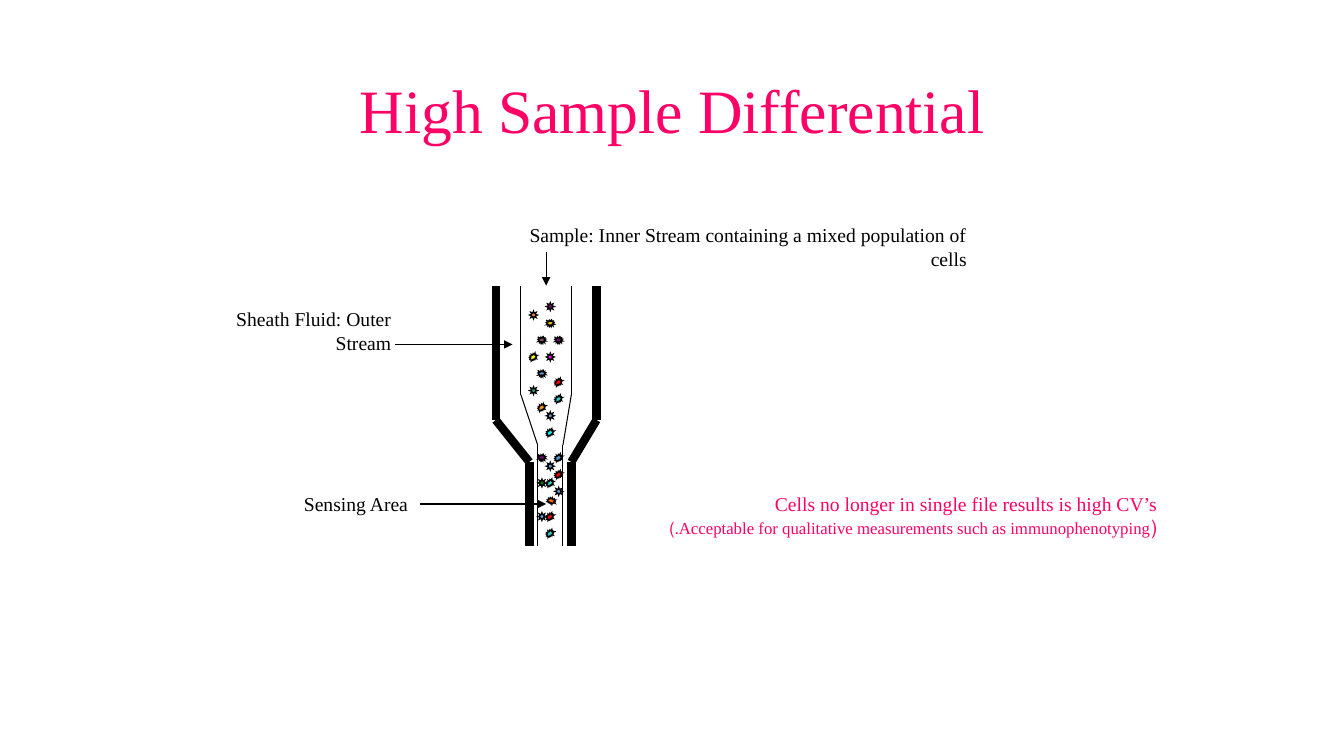
from dataclasses import dataclass
from itertools import pairwise

from lxml.etree import SubElement
from pptx import Presentation
from pptx.dml.color import RGBColor
from pptx.enum.shapes import MSO_CONNECTOR, MSO_SHAPE
from pptx.enum.text import MSO_ANCHOR, MSO_AUTO_SIZE, PP_ALIGN
from pptx.oxml.ns import qn
from pptx.util import Inches, Pt


@dataclass(frozen=True)
class Theme:
    font: str = "Times New Roman"
    accent: str = "FF0066"
    ink: str = "000000"
    title: float = 44
    body: float = 14
    note: float = 12
    thin: float = 0.75
    wall: float = 6


THEME = Theme()
UNIT = 1 / 12

WALLS = [
    (THEME.wall, [(0, 0), (0, 16), (4, 21), (4, 31)]),
    (THEME.wall, [(12, 0), (12, 16), (9, 21), (9, 31)]),
    (THEME.thin, [(3, 0), (3, 13), (5, 19), (5, 31)]),
    (THEME.thin, [(9, 0), (9, 13), (8, 19), (8, 31)]),
]

SEAL, BURST, SUN = MSO_SHAPE.EXPLOSION1, MSO_SHAPE.EXPLOSION2, MSO_SHAPE.SUN
CELLS = [
    (7, 20, BURST, "5B9BD5"),
    (5, 20, SEAL, "800080"),
    (5, 23, SUN, "008000"),
    (5, 6, SEAL, "954F72"),
    (5, 14, BURST, "FF9900"),
    (4, 3, SUN, "ED7D31"),
    (7, 6, SEAL, "800080"),
    (6, 4, SEAL, "FFCC00"),
    (5, 10, SEAL, "5B9BD5"),
    (6, 17, BURST, "00FFFF"),
    (7, 13, BURST, "33CCCC"),
    (4, 8, BURST, "FFFF00"),
    (7, 11, BURST, "FF0000"),
    (6, 2, SUN, "800080"),
    (4, 12, SUN, "339966"),
    (6, 8, SUN, "FF00FF"),
    (6, 15, SUN, "5B9BD5"),
    (7, 24, SUN, "5B9BD5"),
    (6, 21, SUN, "5B9BD5"),
    (7, 22, BURST, "FF0000"),
    (6, 23, BURST, "33CCCC"),
    (5, 27, SUN, "5B9BD5"),
    (6, 27, BURST, "FF0000"),
    (6, 29, BURST, "33CCCC"),
]
TILTED_CELL = (6.15, 25.15, BURST, "FF6600", 54.1)

LABELS = [
    ("Sheath Fluid: Outer Stream", (-33.25, 2, 22, 6.8), (-12, 7), (2, 7)),
    ("Sample: Inner Stream containing a mixed population of cells",
     (1.25, -8, 56, 6.8), (6, -4), (6, 0)),
    ("Sensing Area", (-25.25, 24, 16, 4), (-9, 26), (6, 26)),
]


def apply(obj, formats):
    for name, value in formats.items():
        setattr(obj, name, value)


def add_text(s, box, paragraphs, color, frame=None, paragraph=None):
    tf = s.shapes.add_textbox(*map(Inches, box)).text_frame
    apply(tf, {"word_wrap": True, **(frame or {})})
    for i, runs in enumerate(paragraphs):
        p = tf.add_paragraph() if i else tf.paragraphs[0]
        apply(p, {"alignment": PP_ALIGN.RIGHT, **(paragraph or {})})
        p._p.get_or_add_pPr().set("rtl", "1")
        for text, size in runs:
            r = p.add_run()
            r.text = text
            apply(r.font, {"name": THEME.font, "size": Pt(size)})
            r.font.color.rgb = RGBColor.from_string(color)


def add_line(s, start, end, width, arrow=False):
    cx = s.shapes.add_connector(MSO_CONNECTOR.STRAIGHT, *map(Inches, start + end))
    cx.line.width = Pt(width)
    cx.line.color.rgb = RGBColor.from_string(THEME.ink)
    if arrow:
        SubElement(cx.line._get_or_add_ln(), qn("a:tailEnd"), type="triangle")
    SubElement(cx._element.spPr, qn("a:effectLst"))


def on_grid(box, point):
    return box[0] + point[0] * UNIT, box[1] + point[1] * UNIT


def add_cell(s, box, col, row, kind, color, rotation=0):
    sp = s.shapes.add_shape(kind, *map(Inches, on_grid(box, (col, row)) + (UNIT, UNIT)))
    sp.rotation = rotation
    sp.shadow.inherit = False
    sp.fill.solid()
    sp.fill.fore_color.rgb = RGBColor.from_string(color)
    sp.line.color.rgb = RGBColor.from_string(THEME.ink)
    sp.line.width = Pt(THEME.thin)
    SubElement(sp.line._get_or_add_ln(), qn("a:miter"), lim="800000")


def add_title(s, box):
    add_text(s, box, [[("High Sample Differential", THEME.title)]], THEME.accent,
             {"vertical_anchor": MSO_ANCHOR.MIDDLE},
             {"alignment": PP_ALIGN.CENTER, "line_spacing": 0.9})


def add_flow_cell(s, box):
    for width, points in WALLS:
        for start, end in pairwise(points):
            add_line(s, on_grid(box, start), on_grid(box, end), width)
    for cell in [TILTED_CELL, *CELLS]:
        add_cell(s, box, *cell)


def add_labels(s, box):
    for text, (x, y, w, h), start, end in LABELS:
        area = on_grid(box, (x, y)) + (w * UNIT, h * UNIT)
        add_text(s, area, [[(text, THEME.body)]], THEME.ink,
                 {"auto_size": MSO_AUTO_SIZE.SHAPE_TO_FIT_TEXT})
        add_line(s, on_grid(box, start), on_grid(box, end), THEME.thin, arrow=True)


def add_conclusion(s, box):
    add_text(s, box, [
        [("Cells no longer in single file results is high CV’s", THEME.body)],
        [("(", THEME.body),
         ("Acceptable for qualitative measurements such as immunophenotyping.)", THEME.note)],
    ], THEME.accent, {"auto_size": MSO_AUTO_SIZE.SHAPE_TO_FIT_TEXT})


def main():
    prs = Presentation()
    apply(prs, {"slide_width": Inches(13.33), "slide_height": Inches(7.5)})
    s = prs.slides.add_slide(prs.slide_layouts[6])
    flow_cell = (59 * UNIT, 34 * UNIT, 12 * UNIT, 31 * UNIT)
    add_title(s, (0.92, 0.4, 11.5, 1.45))
    add_flow_cell(s, flow_cell)
    add_labels(s, flow_cell)
    add_conclusion(s, (6, 4.83, 5.58, 0.57))
    prs.save("out.pptx")


if __name__ == "__main__":
    main()
